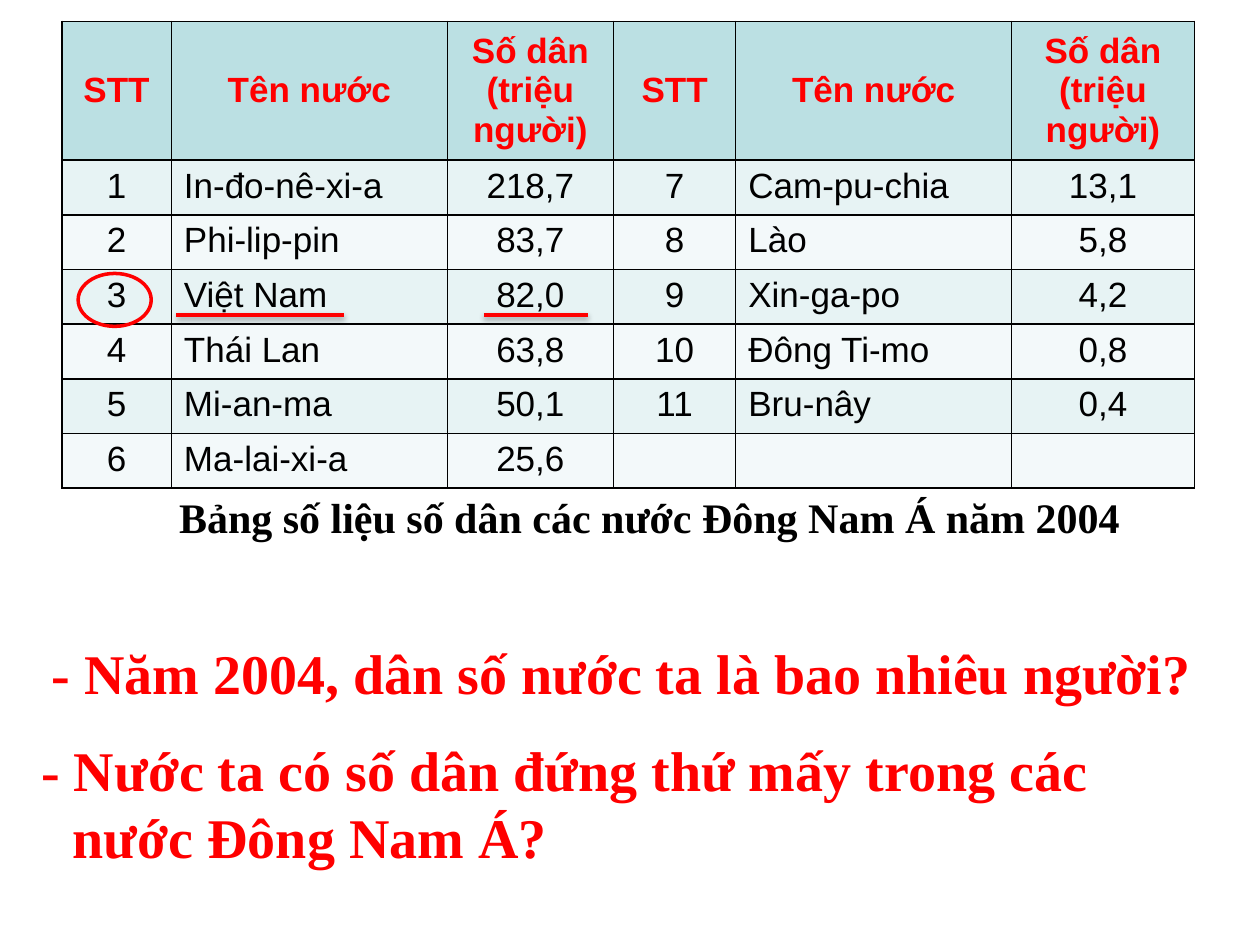
from lxml import etree
from pptx import Presentation
from pptx.dml.color import RGBColor
from pptx.enum.shapes import MSO_CONNECTOR, MSO_SHAPE
from pptx.enum.text import MSO_ANCHOR, MSO_AUTO_SIZE, PP_ALIGN
from pptx.oxml import parse_xml
from pptx.oxml.ns import nsdecls, qn
from pptx.util import Inches, Pt


def rgb(value):
    return RGBColor.from_string(value)


class Deck:
    RED, BLACK = "FF0000", "000000"
    HEADER, BANDS = "BBE0E3", ("E7F3F4", "F3F9FA")
    SERIF, SANS = "Times New Roman", "Arial"

    def __init__(self, prs):
        self.prs = prs
        self.s = prs.slides.add_slide(prs.slide_layouts[5])

    def add_text(self, tf, text, color, align=PP_ALIGN.LEFT, **font):
        p = tf.paragraphs[0]
        p.alignment = align
        r = p.add_run()
        r.text = text
        for name, value in font.items():
            setattr(r.font, name, value)
        r.font.color.rgb = rgb(color)
        return p

    def frame(self, sp, box):
        for name, value in zip(("left", "top", "width", "height"), box):
            setattr(sp, name, Inches(value))
        tf = sp.text_frame
        settings = {"word_wrap": True, "vertical_anchor": MSO_ANCHOR.TOP,
                    "auto_size": MSO_AUTO_SIZE.SHAPE_TO_FIT_TEXT}
        for name, value in settings.items():
            setattr(tf, name, value)
        return tf

    def title(self, text, box):
        tf = self.frame(self.s.shapes.title, box)
        self.add_text(tf, text, self.BLACK, PP_ALIGN.CENTER,
                      name=self.SERIF, size=Pt(24), bold=True)

    def question(self, text, box, margin=0, indent=0):
        sp = self.s.shapes.add_textbox(0, 0, 0, 0)
        p = self.add_text(self.frame(sp, box), text, self.RED,
                          name=self.SERIF, size=Pt(32), bold=True)
        pPr = p._p.get_or_add_pPr()
        pPr.set("marL", str(Inches(margin)))
        pPr.set("indent", str(Inches(indent)))

    def borders(self, cell):
        # Borders come before the fill in the cell properties
        tcPr = cell._tc.get_or_add_tcPr()
        for i, side in enumerate(("lnL", "lnR", "lnT", "lnB")):
            tcPr.insert(i, parse_xml(
                f'<a:{side} {nsdecls("a")} w="{Pt(1)}"><a:solidFill>'
                f'<a:srgbClr val="{self.BLACK}"/></a:solidFill></a:{side}>'))

    def table(self, rows, left, top, widths, heights):
        sp = self.s.shapes.add_table(
            len(rows), len(widths), Inches(left), Inches(top),
            Inches(sum(widths)), Inches(sum(heights)))
        tbl = sp.table
        tbl.first_row = tbl.horz_banding = False
        for column, width in zip(tbl.columns, widths):
            column.width = Inches(width)
        for i, row in enumerate(rows):
            tbl.rows[i].height = Inches(heights[i])
            for j, text in enumerate(row):
                cell, header = tbl.cell(i, j), i == 0
                cell.fill.solid()
                cell.fill.fore_color.rgb = rgb(
                    self.HEADER if header else self.BANDS[(i - 1) % 2])
                self.borders(cell)
                if header:
                    cell.vertical_anchor = MSO_ANCHOR.MIDDLE
                if text:
                    is_name = j % 3 == 1 and not header
                    self.add_text(cell.text_frame, text,
                                  self.RED if header else self.BLACK,
                                  PP_ALIGN.LEFT if is_name else PP_ALIGN.CENTER,
                                  name=self.SANS, size=Pt(20), bold=header)

    def stroke(self, sp):
        sp.line.color.rgb = rgb(self.RED)
        sp.line.width = Pt(2)

    def ring(self, *box):
        sp = self.s.shapes.add_shape(MSO_SHAPE.OVAL, *map(Inches, box))
        sp.shadow.inherit = False
        sp.fill.background()
        self.stroke(sp)

    def underline(self, x1, x2, y):
        sp = self.s.shapes.add_connector(
            MSO_CONNECTOR.STRAIGHT, Inches(x1), Inches(y), Inches(x2), Inches(y))
        self.stroke(sp)
        effects = etree.SubElement(sp._element.spPr, qn("a:effectLst"))
        effects.append(parse_xml(
            f'<a:outerShdw {nsdecls("a")} blurRad="40000" dist="20000" dir="5400000" '
            f'rotWithShape="0"><a:srgbClr val="{self.BLACK}"><a:alpha val="38000"/>'
            '</a:srgbClr></a:outerShdw>'))


COUNTRIES = [
    ("In-đo-nê-xi-a", "218,7"), ("Phi-lip-pin", "83,7"), ("Việt Nam", "82,0"),
    ("Thái Lan", "63,8"), ("Mi-an-ma", "50,1"), ("Ma-lai-xi-a", "25,6"),
    ("Cam-pu-chia", "13,1"), ("Lào", "5,8"), ("Xin-ga-po", "4,2"),
    ("Đông Ti-mo", "0,8"), ("Bru-nây", "0,4"),
]
HALF = 6


def main():
    prs = Presentation()
    prs.slide_width, prs.slide_height = Inches(10), Inches(7.5)
    deck = Deck(prs)

    # Caption and questions
    deck.title("Bảng số liệu số dân các nước Đông Nam Á năm 2004",
               (0.57, 3.85, 9.17, 0.51))
    deck.question("- Năm 2004, dân số nước ta là bao nhiêu người?",
                  (0.31, 5.02, 9.58, 0.63))
    deck.question("- Nước ta có số dân đứng thứ mấy trong các nước Đông Nam Á?",
                  (0.17, 5.79, 9.33, 1.17), margin=0.31, indent=-0.25)

    # Population table: the ranking is split into two halves side by side
    ranked = [(str(n), *country) for n, country in enumerate(COUNTRIES, 1)]
    ranked += [("", "", "")] * (2 * HALF - len(ranked))
    rows = [("STT", "Tên nước", "Số dân (triệu người)") * 2]
    rows += [a + b for a, b in zip(ranked[:HALF], ranked[HALF:])]
    header = 1.1
    deck.table(rows, 0.49, 0.17, (0.87, 2.19, 1.32, 0.97, 2.19, 1.45),
               [header] + [(3.7 - header) / HALF] * HALF)

    # Marks on the row of Việt Nam
    deck.ring(0.62, 2.17, 0.58, 0.42)
    for x1, x2 in ((1.4, 2.73), (3.84, 4.67)):
        deck.underline(x1, x2, 2.5)

    prs.save("out.pptx")


if __name__ == "__main__":
    main()
